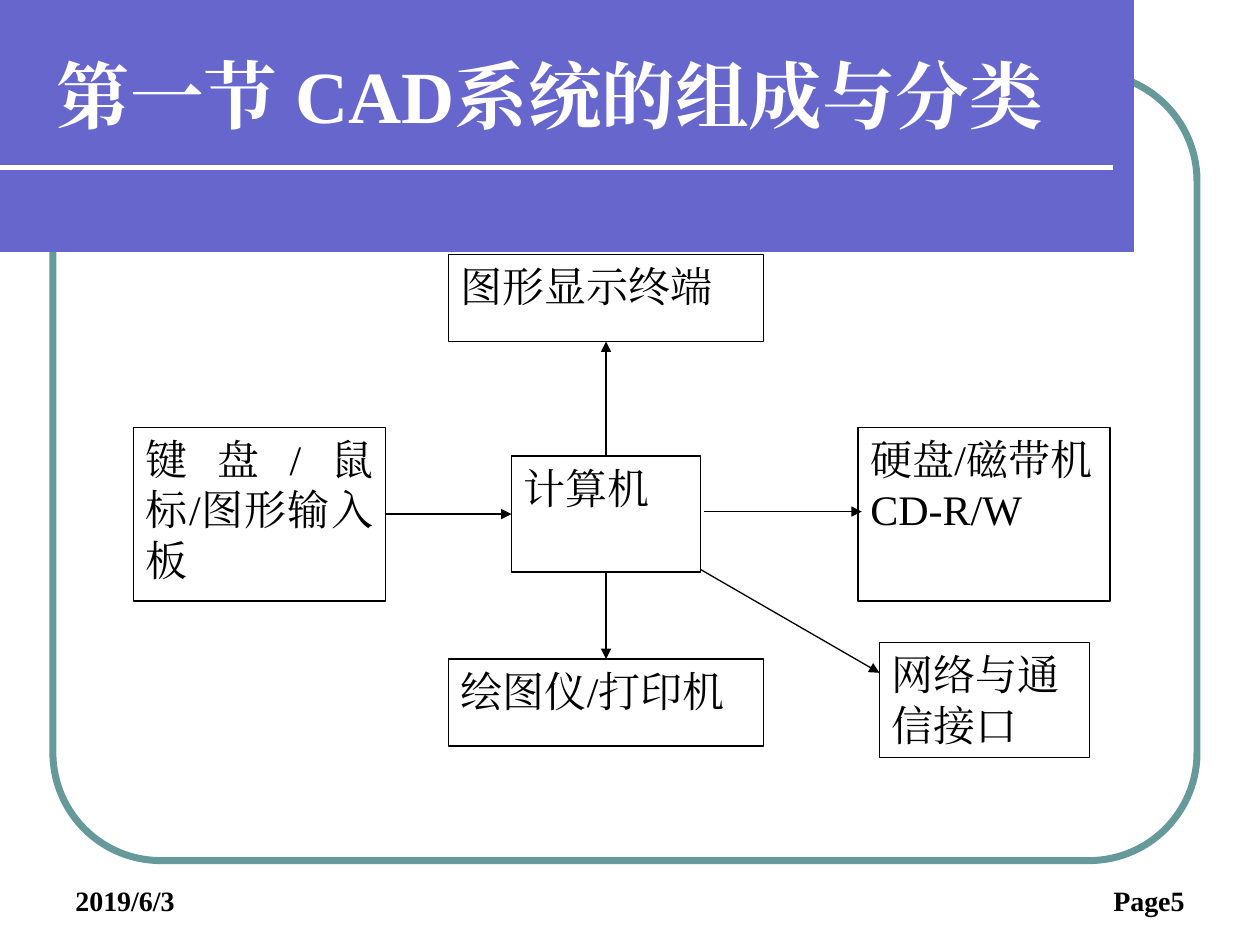
from dataclasses import dataclass
from math import cos, pi, sin

from lxml.etree import SubElement
from pptx import Presentation
from pptx.dml.color import RGBColor
from pptx.enum.shapes import MSO_CONNECTOR, MSO_SHAPE
from pptx.enum.text import MSO_ANCHOR, PP_ALIGN
from pptx.oxml.ns import qn
from pptx.util import Inches, Pt


@dataclass(frozen=True)
class Theme:
    font: str = "Times New Roman"
    ink: RGBColor = RGBColor(0, 0, 0)
    paper: RGBColor = RGBColor(255, 255, 255)
    banner: RGBColor = RGBColor(0x66, 0x66, 0xCC)
    frame: RGBColor = RGBColor(0x66, 0x99, 0x99)
    title_size: int = 42
    node_size: int = 24
    footer_size: int = 16
    thin: float = 0.75
    rule: float = 3
    thick: float = 4


THEME = Theme()


def inches(*lengths):
    return [Inches(length) for length in lengths]


def write(shape, text, size, color, bold=False, align=PP_ALIGN.LEFT, anchor=MSO_ANCHOR.TOP):
    frame = shape.text_frame
    frame.word_wrap = True
    frame.vertical_anchor = anchor
    frame.text = text
    for paragraph in frame.paragraphs:
        paragraph.alignment = align
        for run in paragraph.runs:
            run.font.name = THEME.font
            run.font.size = Pt(size)
            run.font.bold = bold
            run.font.color.rgb = color
            east_asian = SubElement(run.font._element, qn("a:ea"))
            east_asian.set("typeface", THEME.font)


def add_line(slide, start, end, color, width, arrow=False):
    connector = slide.shapes.add_connector(MSO_CONNECTOR.STRAIGHT, *inches(*start, *end))
    connector.line.color.rgb = color
    connector.line.width = Pt(width)
    if arrow:
        head = SubElement(connector.line._get_or_add_ln(), qn("a:tailEnd"))
        head.set("type", "triangle")
    SubElement(connector._element.spPr, qn("a:effectLst"))


def add_frame(slide, box):
    frame = slide.shapes.add_shape(MSO_SHAPE.ROUNDED_RECTANGLE, *inches(*box))
    frame.adjustments[0] = 0.137
    frame.shadow.inherit = False
    frame.fill.background()
    frame.line.color.rgb = THEME.frame
    frame.line.width = Pt(THEME.thick)


def add_banner(slide, box, title):
    left, top, width, height = box
    radius = height / 2
    center_x, center_y = left + width - radius, top + radius
    steps = 60
    angles = [pi * step / steps - pi / 2 for step in range(steps + 1)]
    curve = [(center_x + radius * cos(a), center_y + radius * sin(a)) for a in angles]
    builder = slide.shapes.build_freeform(left, top, scale=Inches(1))
    builder.add_line_segments(curve + [(left, top + height)], close=True)
    banner = builder.convert_to_shape()
    banner.shadow.inherit = False
    banner.fill.solid()
    banner.fill.fore_color.rgb = THEME.banner
    banner.line.fill.background()

    rule_y = top + height - 0.17
    add_line(slide, (left, rule_y), (left + width - 0.5, rule_y), THEME.paper, THEME.rule)
    heading = slide.shapes.add_textbox(*inches(left + 0.35, top + 0.08, width - 0.71, 1))
    write(heading, title, THEME.title_size, THEME.paper, bold=True, anchor=MSO_ANCHOR.MIDDLE)


def add_footer(slide, box, date, page):
    left, top, width, height = box
    part = 2.33
    for text, x, align in (
        (date, left, PP_ALIGN.LEFT),
        (page, left + width - part, PP_ALIGN.RIGHT),
    ):
        label = slide.shapes.add_textbox(*inches(x, top, part, height))
        write(label, text, THEME.footer_size, THEME.ink, True, align, MSO_ANCHOR.BOTTOM)


def add_node(slide, box, text, align=PP_ALIGN.JUSTIFY, filled=True):
    node = slide.shapes.add_shape(MSO_SHAPE.RECTANGLE, *inches(*box))
    node.shadow.inherit = False
    if filled:
        node.fill.solid()
        node.fill.fore_color.rgb = THEME.paper
    else:
        node.fill.background()
    node.line.color.rgb = THEME.ink
    node.line.width = Pt(THEME.thin)
    write(node, text, THEME.node_size, THEME.ink, align=align)


def add_diagram(slide, box):
    left, top, width, height = box
    center_x = left + 3.75
    output_w, output_h = 2.5, 0.69
    side_w, side_h, side_y = 2, 1.38, top + 1.37
    computer_w, computer_h, computer_y = 1.5, 0.92, top + 1.6
    computer_x = center_x - computer_w / 2
    computer_right = computer_x + computer_w
    computer_bottom = computer_y + computer_h
    output_x = center_x - output_w / 2
    plotter_y = top + 3.21
    storage_x = left + width - side_w
    network_w, network_h = 1.67, 0.91
    network_x, network_y = left + 5.92, top + height - network_h

    add_node(slide, (output_x, top, output_w, output_h), "图形显示终端")
    add_node(slide, (left, side_y, side_w, side_h), "键盘/鼠标/图形输入板")
    add_node(slide, (computer_x, computer_y, computer_w, computer_h), "计算机")
    add_node(slide, (output_x, plotter_y, output_w, output_h), "绘图仪/打印机")
    add_node(slide, (storage_x, side_y, side_w, side_h), "硬盘/磁带机\nCD-R/W")

    middle_y = side_y + side_h / 2
    for start, end in (
        ((left + side_w, middle_y), (computer_x, middle_y)),
        ((center_x, computer_y), (center_x, top + output_h)),
        ((center_x, computer_bottom), (center_x, plotter_y)),
        ((computer_right + 0.03, middle_y - 0.02), (storage_x + 0.03, middle_y - 0.02)),
        ((computer_right, computer_bottom - 0.02), (network_x, network_y + 0.24)),
    ):
        add_line(slide, start, end, THEME.ink, THEME.thin, arrow=True)

    network = (network_x, network_y, network_w, network_h)
    add_node(slide, network, "网络与通信接口", PP_ALIGN.LEFT, filled=False)


def main():
    presentation = Presentation()
    presentation.slide_width, presentation.slide_height = inches(10, 7.5)
    slide = presentation.slides.add_slide(presentation.slide_layouts[6])
    add_frame(slide, (0.42, 0.58, 9.08, 6.25))
    add_banner(slide, (0, 0.17, 9.33, 1.33), "第一节 CAD系统的组成与分类")
    add_footer(slide, (0.5, 6.98, 9, 0.35), "2019/6/3", "Page5")
    add_diagram(slide, (1.06, 2.02, 7.75, 3.99))
    presentation.save("out.pptx")


if __name__ == "__main__":
    main()
